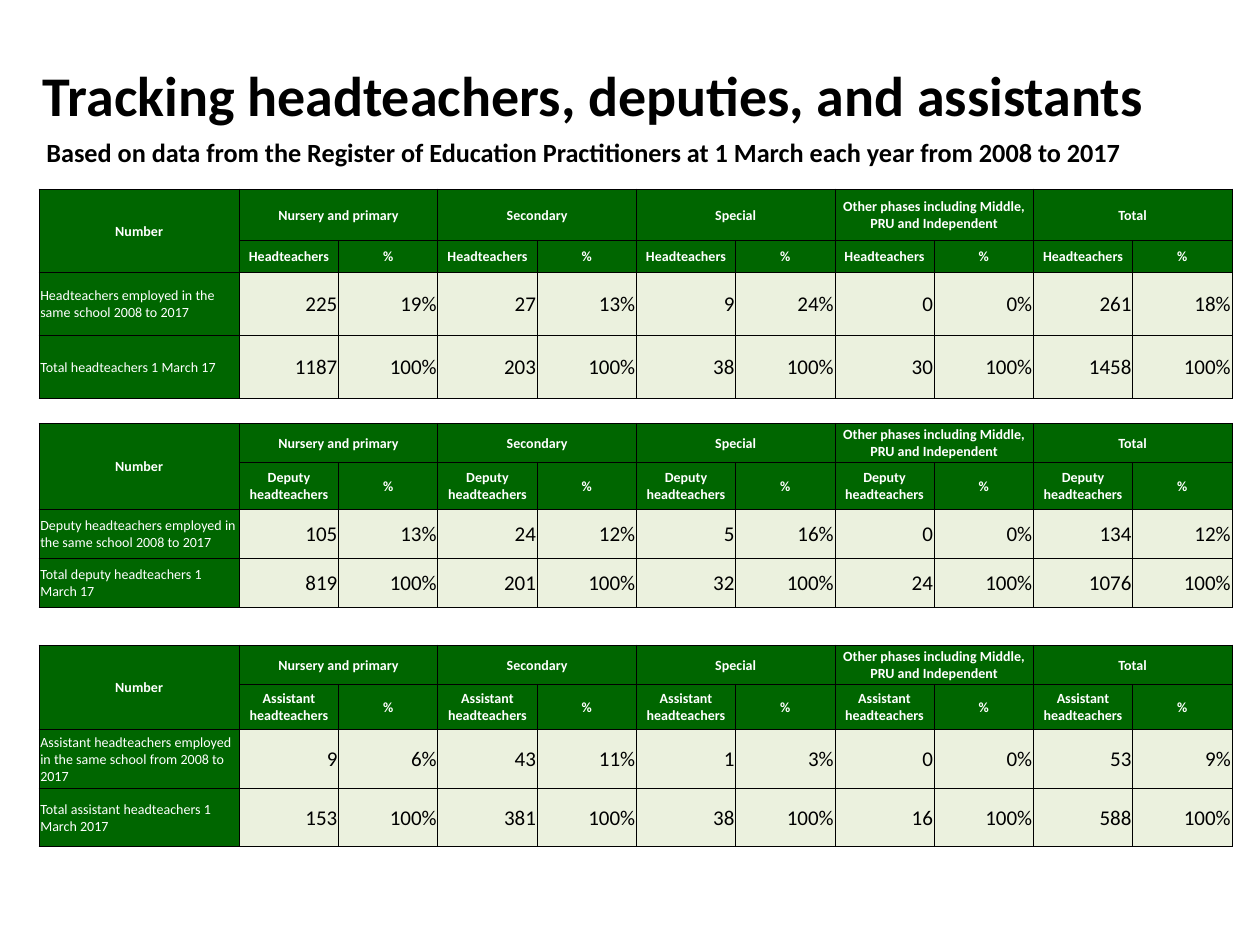
from dataclasses import dataclass

from lxml import etree
from pptx import Presentation
from pptx.dml.color import RGBColor
from pptx.enum.text import MSO_ANCHOR, PP_ALIGN
from pptx.oxml.ns import qn
from pptx.util import Inches, Pt

LEFT, CENTER, RIGHT = PP_ALIGN.LEFT, PP_ALIGN.CENTER, PP_ALIGN.RIGHT
MIDDLE = MSO_ANCHOR.MIDDLE

GREEN = RGBColor(0x00, 0x66, 0x00)
PALE_GREEN = RGBColor(0xEB, 0xF1, 0xDE)
BLACK = RGBColor(0x00, 0x00, 0x00)
WHITE = RGBColor(0xFF, 0xFF, 0xFF)

FONT = "Calibri"
SLIDE_WIDTH, SLIDE_HEIGHT = Inches(10), Inches(7.5)
TABLE_LEFT, TABLE_WIDTH = Inches(0.31), Inches(9.47)
LABEL_WIDTH = Inches(1.59)
BORDER_WIDTH = Pt(0.5)
CELL_MARGIN = Inches(0.01)

PHASES = (
    "Nursery and primary",
    "Secondary",
    "Special",
    "Other phases including Middle, PRU and Independent",
    "Total",
)
COLUMN_COUNT = 1 + 2 * len(PHASES)
DATA_WIDTH = (TABLE_WIDTH - LABEL_WIDTH) // (COLUMN_COUNT - 1)


@dataclass(frozen=True)
class CellStyle:
    fill: RGBColor
    color: RGBColor
    size: float
    bold: bool
    alignment: PP_ALIGN


HEADER = CellStyle(GREEN, WHITE, 8, True, CENTER)
ROW_LABEL = CellStyle(GREEN, WHITE, 8, False, LEFT)
VALUE = CellStyle(PALE_GREEN, BLACK, 12, False, RIGHT)


@dataclass(frozen=True)
class StaffTable:
    role: str
    top: float
    row_heights: tuple[float, ...]
    same_school_label: str
    same_school: tuple[int, ...]
    percentages: tuple[int, ...]
    total_label: str
    totals: tuple[int, ...]

    def rows(self) -> list[list[str]]:
        """Return the cell texts; cells hidden by a merge are empty."""
        phases = ["Number"]
        measures = [""]
        same_school = [self.same_school_label]
        totals = [self.total_label]
        for phase, count, percentage, total in zip(
            PHASES, self.same_school, self.percentages, self.totals
        ):
            phases += [phase, ""]
            measures += [self.role, "%"]
            same_school += [str(count), f"{percentage}%"]
            totals += [str(total), "100%"]
        return [phases, measures, same_school, totals]


STAFF_TABLES = (
    StaffTable(
        "Headteachers", 1.5, (0.41, 0.25, 0.5, 0.5),
        "Headteachers employed in the same school 2008 to 2017",
        (225, 27, 9, 0, 261), (19, 13, 24, 0, 18),
        "Total headteachers 1 March 17", (1187, 203, 38, 30, 1458),
    ),
    StaffTable(
        "Deputy headteachers", 3.36, (0.31, 0.37, 0.39, 0.39),
        "Deputy headteachers employed in the same school 2008 to 2017",
        (105, 24, 5, 0, 134), (13, 12, 16, 0, 12),
        "Total deputy headteachers 1 March 17", (819, 201, 32, 24, 1076),
    ),
    StaffTable(
        "Assistant headteachers", 5.12, (0.31, 0.36, 0.47, 0.46),
        "Assistant headteachers employed in the same school from 2008 to 2017",
        (9, 43, 1, 0, 53), (6, 11, 3, 0, 9),
        "Total assistant headteachers 1 March 2017", (153, 381, 38, 16, 588),
    ),
)


def format_paragraph(paragraph, size: float, color: RGBColor, bold: bool, alignment: PP_ALIGN) -> None:
    paragraph.alignment = alignment
    paragraph.font.name = FONT
    paragraph.font.size = Pt(size)
    paragraph.font.bold = bold
    paragraph.font.color.rgb = color


def add_borders(cell) -> None:
    properties = cell._tc.get_or_add_tcPr()
    for side in ("a:lnL", "a:lnR", "a:lnT", "a:lnB"):
        line = etree.SubElement(properties, qn(side), w=str(BORDER_WIDTH))
        fill = etree.SubElement(line, qn("a:solidFill"))
        etree.SubElement(fill, qn("a:srgbClr"), val=str(BLACK))


def fill_cell(cell, text: str, style: CellStyle) -> None:
    add_borders(cell)
    cell.fill.solid()
    cell.fill.fore_color.rgb = style.fill
    cell.margin_left = cell.margin_right = cell.margin_top = CELL_MARGIN
    cell.margin_bottom = 0
    cell.vertical_anchor = MIDDLE
    cell.text = text
    format_paragraph(
        cell.text_frame.paragraphs[0], style.size, style.color, style.bold, style.alignment
    )


def cell_style(row: int, column: int) -> CellStyle:
    if row < 2:
        return HEADER
    return ROW_LABEL if column == 0 else VALUE


def add_staff_table(slide, staff: StaffTable) -> None:
    height = Inches(sum(staff.row_heights))
    table = slide.shapes.add_table(
        len(staff.row_heights), COLUMN_COUNT, TABLE_LEFT, Inches(staff.top), TABLE_WIDTH, height
    ).table
    table.first_row = table.horz_banding = False
    for index, column in enumerate(table.columns):
        column.width = DATA_WIDTH if index else LABEL_WIDTH
    for row, row_height in zip(table.rows, staff.row_heights):
        row.height = Inches(row_height)
    for row_index, texts in enumerate(staff.rows()):
        for column_index, text in enumerate(texts):
            cell = table.cell(row_index, column_index)
            fill_cell(cell, text, cell_style(row_index, column_index))
    table.cell(0, 0).merge(table.cell(1, 0))
    for first in range(1, COLUMN_COUNT, 2):
        table.cell(0, first).merge(table.cell(0, first + 1))


def add_headings(slide) -> None:
    title = slide.shapes.title
    title.left, title.top = Inches(0.24), Inches(0.12)
    title.width, title.height = Inches(9.61), Inches(1.25)
    title.text_frame.text = "Tracking headteachers, deputies, and assistants"
    title.text_frame.vertical_anchor = MIDDLE
    format_paragraph(title.text_frame.paragraphs[0], 32, BLACK, True, LEFT)

    subtitle = slide.shapes.add_textbox(Inches(0.27), Inches(1.03), title.width, Inches(0.35))
    subtitle.text_frame.word_wrap = True
    subtitle.text_frame.text = (
        "Based on data from the Register of Education Practitioners "
        "at 1 March each year from 2008 to 2017"
    )
    format_paragraph(subtitle.text_frame.paragraphs[0], 15, BLACK, True, LEFT)


def main() -> None:
    presentation = Presentation()
    presentation.slide_width, presentation.slide_height = SLIDE_WIDTH, SLIDE_HEIGHT
    title_only_layout = presentation.slide_layouts[5]
    slide = presentation.slides.add_slide(title_only_layout)
    add_headings(slide)
    for staff in STAFF_TABLES:
        add_staff_table(slide, staff)
    presentation.save("out.pptx")


if __name__ == "__main__":
    main()
